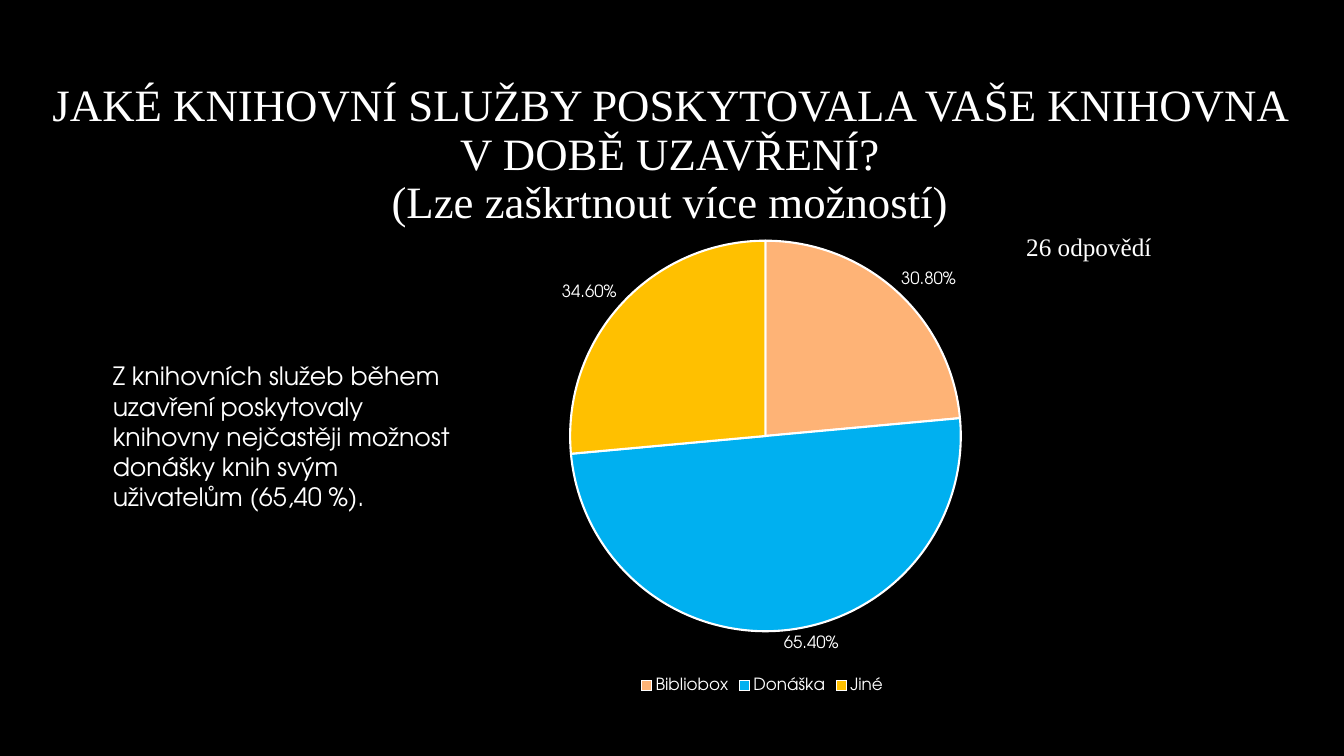
from pptx import Presentation
from pptx.chart.data import CategoryChartData
from pptx.dml.color import RGBColor
from pptx.enum.chart import XL_CHART_TYPE as ChartType
from pptx.enum.chart import XL_LABEL_POSITION as LabelPosition
from pptx.enum.chart import XL_LEGEND_POSITION as LegendPosition
from pptx.enum.text import MSO_ANCHOR as Anchor
from pptx.enum.text import PP_ALIGN as Align
from pptx.util import Inches, Pt

COLORS = {"background": "000000", "text": "FFFFFF"}
SERVICES = {
    "Bibliobox": (0.308, "FEB376"),
    "Donáška": (0.654, "00B0F0"),
    "Jiné": (0.346, "FFC000"),
}
SERIF = "Times New Roman"
SANS = "TeX Gyre Adventor"


def set_font(font, name, size):
    font.name = name
    font.size = Pt(size)
    font.color.rgb = RGBColor.from_string(COLORS["text"])


def add_text(left, top, width, height, text, font_name, size):
    """Add a wrapping text box and return its text frame."""
    box = slide.shapes.add_textbox(Inches(left), Inches(top), Inches(width), Inches(height))
    frame = box.text_frame
    frame.word_wrap = True
    frame.text = text
    set_font(frame.paragraphs[0].font, font_name, size)
    return frame


presentation = Presentation()
presentation.slide_width = Inches(13.33)
presentation.slide_height = Inches(7.5)
slide = presentation.slides.add_slide(presentation.slide_layouts[6])
background = slide.background.fill
background.solid()
background.fore_color.rgb = RGBColor.from_string(COLORS["background"])

# Title; \v is a line break inside the paragraph
title = add_text(
    0.24, 0.84, 12.81, 1.41,
    "JAKÉ KNIHOVNÍ SLUŽBY POSKYTOVALA VAŠE KNIHOVNA V DOBĚ UZAVŘENÍ?\v"
    "(Lze zaškrtnout více možností)",
    SERIF, 32,
)
title.vertical_anchor = Anchor.MIDDLE
title.paragraphs[0].alignment = Align.CENTER
title.paragraphs[0].line_spacing = 0.9

add_text(10.08, 2.25, 2.16, 0.4, "26 odpovědí", SERIF, 18)

# Pie chart of services
chart_data = CategoryChartData(number_format="0.00%")
chart_data.categories = list(SERVICES)
chart_data.add_series("Series 1", [share for share, color in SERVICES.values()])
chart = slide.shapes.add_chart(
    ChartType.PIE, Inches(3.39), Inches(2.25), Inches(8.34), Inches(4.67), chart_data
).chart
set_font(chart.font, SANS, 10)
chart.has_title = False
chart.has_legend = True
chart.legend.position = LegendPosition.BOTTOM
chart.legend.include_in_layout = False
set_font(chart.legend.font, SANS, 12)

plot = chart.plots[0]
plot.vary_by_categories = True
series = plot.series[0]
for index, (share, color) in enumerate(SERVICES.values()):
    slice_format = series.points[index].format
    slice_format.fill.solid()
    slice_format.fill.fore_color.rgb = RGBColor.from_string(color)
    slice_format.line.color.rgb = RGBColor.from_string(COLORS["text"])
    slice_format.line.width = Pt(1.5)

labels = series.data_labels
labels.show_value = True
labels.show_percentage = False
labels.number_format = "0.00%"
labels.number_format_is_linked = False
labels.position = LabelPosition.OUTSIDE_END
set_font(labels.font, SANS, 12)

add_text(
    1.02, 3.53, 3.71, 1.62,
    "Z knihovních služeb během uzavření poskytovaly knihovny nejčastěji "
    "možnost donášky knih svým uživatelům (65,40 %).",
    SANS, 18,
)

presentation.save("out.pptx")
